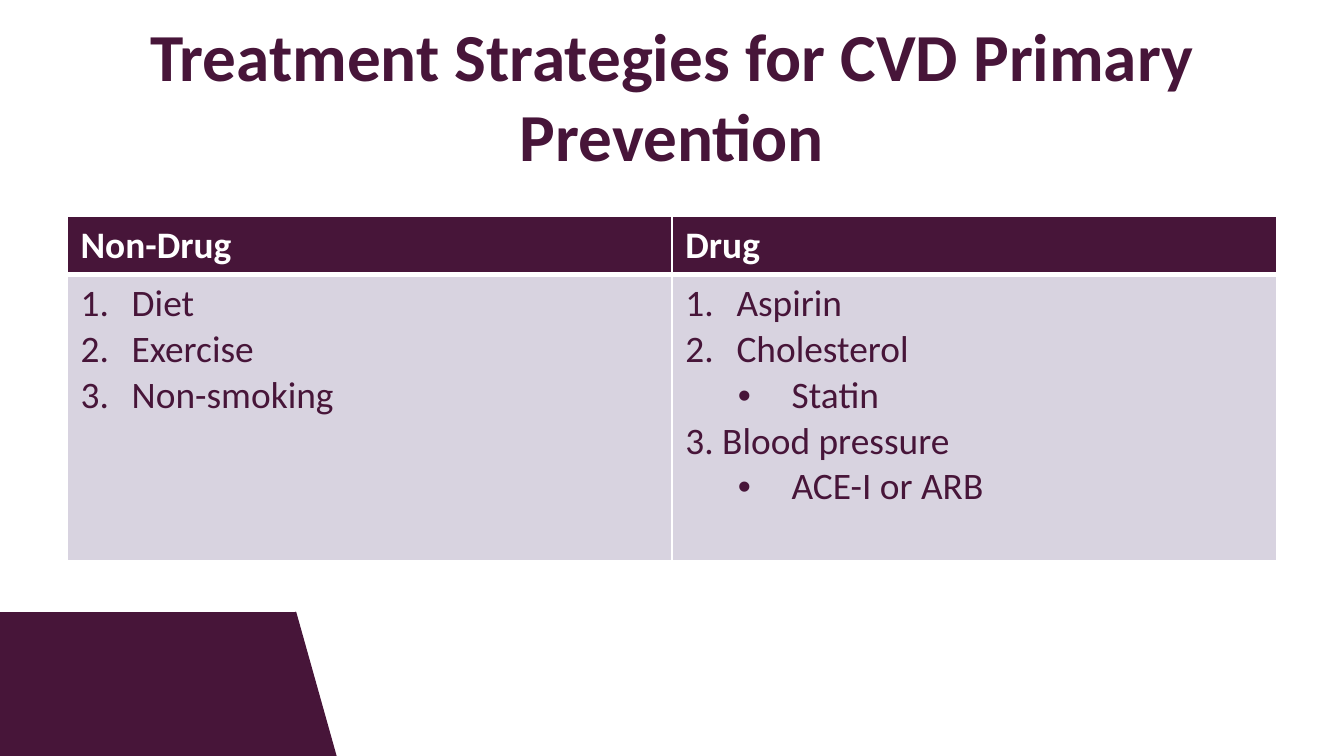
import pptx
import pptx.dml.color
import pptx.enum.shapes
import pptx.enum.text
import pptx.util
from lxml import etree
from pptx.oxml.ns import qn

WIDTH = 10
HEIGHT = WIDTH * 9 / 16
PLUM, LILAC, WHITE = "471539", "D8D3E0", "FFFFFF"
MARGIN = 0.05
HEADER_ROW, BODY_ROW = 0.43, 2.13
NUMBER = ("buAutoNum", {"type": "arabicPeriod"}, 0.38, 0.38)
BULLET = ("buChar", {"char": "•"}, 0.79, 0.4)
COLUMNS = {
    "Non-Drug": [("Diet", NUMBER), ("Exercise", NUMBER), ("Non-smoking", NUMBER)],
    "Drug": [
        ("Aspirin", NUMBER),
        ("Cholesterol", NUMBER),
        ("Statin", BULLET),
        ("3. Blood pressure", None),
        ("ACE-I or ARB", BULLET),
    ],
}


def color(value):
    return pptx.dml.color.RGBColor.from_string(value)


def place(left, top, width, height):
    return [
        pptx.util.Inches(share * length)
        for share, length in zip((left, top, width, height), (WIDTH, HEIGHT) * 2)
    ]


def format_paragraph(paragraph, size, value, bold):
    for run in paragraph.runs:
        run.font.name = "Calibri"
        run.font.size = pptx.util.Pt(size)
        run.font.bold = bold
        run.font.color.rgb = color(value)


def add_title(slide, text):
    frame = slide.shapes.add_textbox(*place(MARGIN, 0.04, 1 - 2 * MARGIN, 0.17)).text_frame
    frame.word_wrap = True
    frame.vertical_anchor = pptx.enum.text.MSO_ANCHOR.MIDDLE
    frame.text = text
    paragraph = frame.paragraphs[0]
    paragraph.alignment = pptx.enum.text.PP_ALIGN.CENTER
    format_paragraph(paragraph, 36, PLUM, True)


def add_corner_piece(slide, kind, left, width):
    top = 0.81
    shape = slide.shapes.add_shape(kind, *place(left, top, width, 1 - top))
    shape.shadow.inherit = False
    shape.fill.solid()
    shape.fill.fore_color.rgb = color(PLUM)
    shape.line.color.rgb = color(PLUM)
    shape.line.width = pptx.util.Pt(0.75)


def add_marker(paragraph, marker):
    tag, attributes, margin, hanging = marker
    properties = paragraph._p.get_or_add_pPr()
    properties.set("marL", str(pptx.util.Inches(margin)))
    properties.set("indent", str(-pptx.util.Inches(hanging)))
    if tag == "buChar":
        etree.SubElement(properties, qn("a:buFont"), typeface="Arial")
    etree.SubElement(properties, qn(f"a:{tag}"), attributes)


def style_cell(cell, fill, top, bottom):
    properties = cell._tc.get_or_add_tcPr()
    for side, width in zip("LRTB", (1, 1, top, bottom)):
        line = etree.SubElement(properties, qn(f"a:ln{side}"), w=str(pptx.util.Pt(width)))
        solid = etree.SubElement(line, qn("a:solidFill"))
        etree.SubElement(solid, qn("a:srgbClr"), val=WHITE)
    cell.fill.solid()
    cell.fill.fore_color.rgb = color(fill)


def fill_cell(cell, items, value, bold):
    cell.text_frame.text = "\n".join(text for text, marker in items)
    for paragraph, (text, marker) in zip(cell.text_frame.paragraphs, items):
        if marker:
            add_marker(paragraph, marker)
        format_paragraph(paragraph, 20, value, bold)


def add_strategy_table(slide):
    height = (HEADER_ROW + BODY_ROW) / HEIGHT
    area = place(MARGIN, 1.61 / HEIGHT, 1 - 2 * MARGIN, height)
    table = slide.shapes.add_table(2, len(COLUMNS), *area).table
    for row, row_height in zip(table.rows, (HEADER_ROW, BODY_ROW)):
        row.height = pptx.util.Inches(row_height)
    for column, (heading, items) in enumerate(COLUMNS.items()):
        header, body = table.cell(0, column), table.cell(1, column)
        style_cell(header, PLUM, 1, 3)
        fill_cell(header, [(heading, None)], WHITE, True)
        style_cell(body, LILAC, 3, 1)
        fill_cell(body, items, PLUM, False)


def main():
    presentation = pptx.Presentation()
    presentation.slide_width = pptx.util.Inches(WIDTH)
    presentation.slide_height = pptx.util.Inches(HEIGHT)
    slide = presentation.slides.add_slide(presentation.slide_layouts[6])
    kinds = pptx.enum.shapes.MSO_SHAPE
    add_corner_piece(slide, kinds.RECTANGLE, 0, 0.22)
    add_corner_piece(slide, kinds.RIGHT_TRIANGLE, 0.22, 0.03)
    add_title(slide, "Treatment Strategies for CVD Primary Prevention")
    add_strategy_table(slide)
    presentation.save("out.pptx")


if __name__ == "__main__":
    main()
